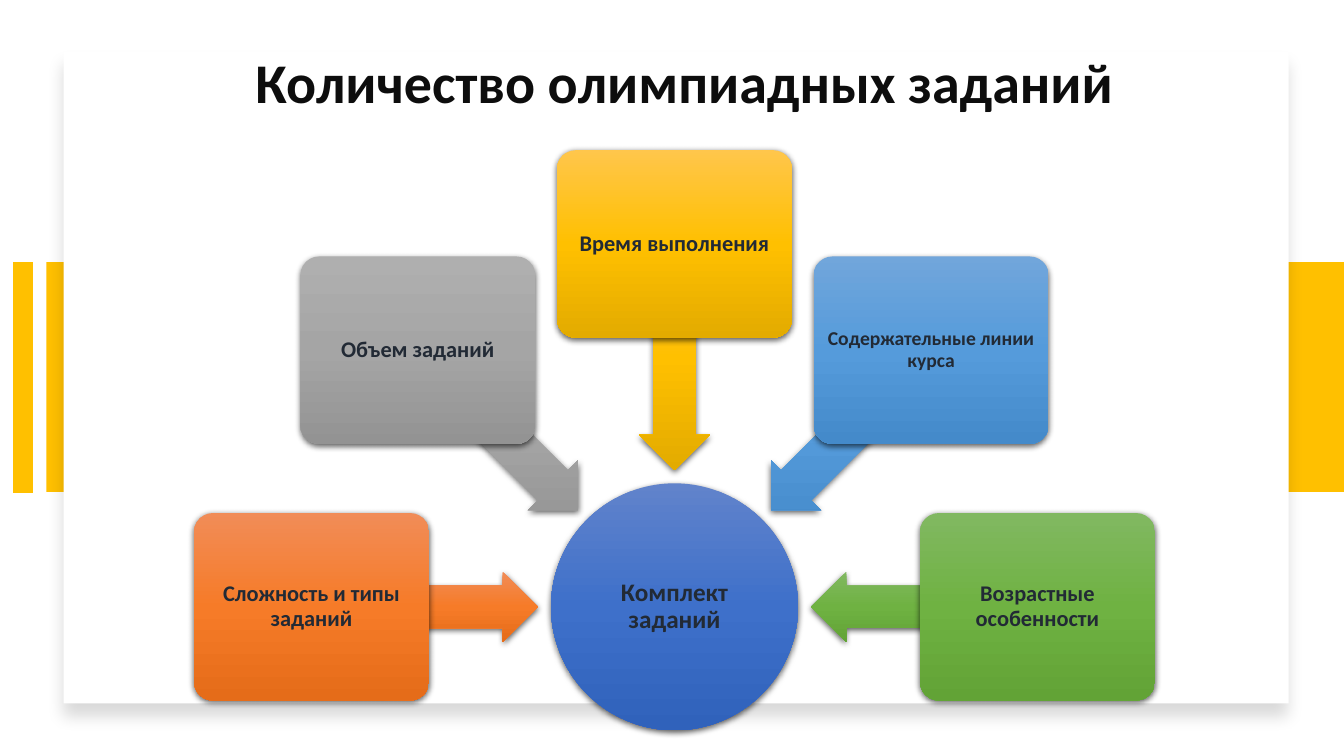
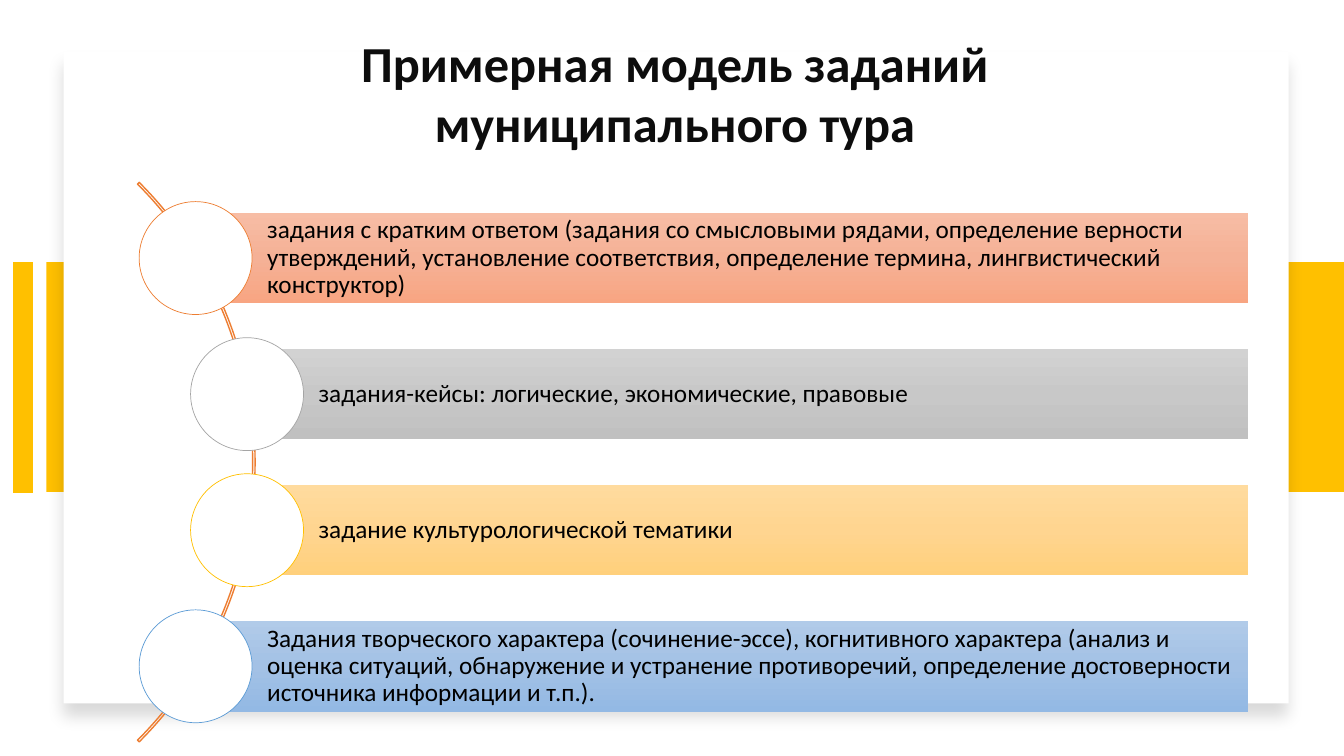
import math

import pptx
import pptx.util
from lxml import etree
from pptx.dml.color import RGBColor
from pptx.enum.shapes import MSO_CONNECTOR, MSO_SHAPE
from pptx.enum.text import MSO_ANCHOR, PP_ALIGN
from pptx.oxml.ns import qn
from copy import deepcopy

Inches, Pt = pptx.util.Inches, pptx.util.Pt

FONT = "Calibri"
WHITE = RGBColor(0xFF, 0xFF, 0xFF)
BLACK = RGBColor(0x00, 0x00, 0x00)
TITLE = RGBColor(0x0D, 0x0D, 0x0D)
LABEL = RGBColor(0x22, 0x2A, 0x35)
ORANGE = RGBColor(0xED, 0x7D, 0x31)
GREY = RGBColor(0xA5, 0xA5, 0xA5)
GOLD = RGBColor(0xFF, 0xC0, 0x00)
BLUE = RGBColor(0x5B, 0x9B, 0xD5)

# Gradients, top to bottom
HUB_GRAD = [RGBColor.from_string(c) for c in ("6183CB", "3E70CA", "3062BB")]
ORANGE_GRAD = [RGBColor.from_string(c) for c in ("F18C57", "F67B28", "E56C19")]
GREY_GRAD = [RGBColor.from_string(c) for c in ("AFAFAF", "A5A5A5", "939393")]
GOLD_GRAD = [RGBColor.from_string(c) for c in ("FFC64B", "FFC000", "E3AB00")]
BLUE_GRAD = [RGBColor.from_string(c) for c in ("71A6DB", "559BDB", "448ACA")]
GREEN_GRAD = [RGBColor.from_string(c) for c in ("81B861", "6FB242", "62A336")]
PALE_ORANGE = [RGBColor.from_string(c) for c in ("F7BDA5", "F5B196", "F8A582")]
PALE_GREY = [RGBColor.from_string(c) for c in ("D2D2D2", "C8C8C8", "C0C0C0")]
PALE_GOLD = [RGBColor.from_string(c) for c in ("FFDB9E", "FFD590", "FFD07C")]
PALE_BLUE = [RGBColor.from_string(c) for c in ("B1CBE9", "A3C1E5", "93B9E4")]

# Shadows: opacity in percent, blur and distance in points
CARD_SHADOW = (15, 11, 10)
NODE_SHADOW = (63, 4.5, 1.5)


def add_shape(s, kind, box, fill=None, line=None, shadow=None):
    """Add a preset shape; fill is a colour, a list of gradient colours or None."""
    sp = s.shapes.add_shape(kind, *[Inches(v) for v in box])
    sp.shadow.inherit = False
    if fill is None:
        sp.fill.background()
    elif isinstance(fill, list):
        sp.fill.gradient()
        sp.fill.gradient_angle = 270
        grad = sp._element.spPr.find(qn("a:gradFill"))
        grad.set("rotWithShape", "0")
        first = grad.find(qn("a:gsLst"))[0]
        first.addnext(deepcopy(first))
        for stop, color, position in zip(sp.fill.gradient_stops, fill, (0, 0.5, 1)):
            stop.color.rgb = color
            stop.position = position
    else:
        sp.fill.solid()
        sp.fill.fore_color.rgb = fill
    if line:
        sp.line.color.rgb, sp.line.width = line[0], Pt(line[1])
    else:
        sp.line.fill.background()
    if shadow:
        alpha, blur, dist = shadow
        effects = sp._element.spPr.find(qn("a:effectLst"))
        outer = etree.SubElement(effects, qn("a:outerShdw"), blurRad=str(Pt(blur)),
                                 dist=str(Pt(dist)), dir="5400000", algn="ctr", rotWithShape="0")
        color = etree.SubElement(outer, qn("a:srgbClr"), val=str(BLACK))
        etree.SubElement(color, qn("a:alpha"), val=str(alpha * 1000))
    return sp


def write(sp, text, size, color, bold=True, align=PP_ALIGN.CENTER, spacing=0.9,
          insets=(0.1, 0.05, 0.1, 0.05)):
    """Put one vertically centred paragraph into a shape."""
    tf = sp.text_frame
    tf.word_wrap = True
    tf.vertical_anchor = MSO_ANCHOR.MIDDLE
    tf.margin_left, tf.margin_top, tf.margin_right, tf.margin_bottom = [Inches(v) for v in insets]
    p = tf.paragraphs[0]
    p.text, p.alignment, p.line_spacing = text, align, spacing
    p.font.name, p.font.size, p.font.bold = FONT, Pt(size), bold
    p.font.color.rgb = color
    return p


prs = pptx.Presentation()
prs.slide_width, prs.slide_height = Inches(13.33), Inches(7.5)

# Shared frame: gold band, gold stripe, white card, title
titles = [
    ("Количество олимпиадных заданий", (2.4, 0.44, 8.77, 0.81), 40, 0.9, 0),
    ("Примерная модель заданий муниципального тура", (2.16, 0.33, 9.07, 1.17), 36, 1.0, 6),
]
for text, box, size, spacing, after in titles:
    s = prs.slides.add_slide(prs.slide_layouts[6])
    add_shape(s, MSO_SHAPE.RECTANGLE, (0.46, 2.6, 12.87, 2.28), GOLD)
    stripe = s.shapes.add_connector(MSO_CONNECTOR.STRAIGHT, Inches(0.23), Inches(2.6),
                                    Inches(0.23), Inches(4.89))
    stripe.line.color.rgb, stripe.line.width = GOLD, Pt(14)
    etree.SubElement(stripe._element.spPr, qn("a:effectLst"))
    add_shape(s, MSO_SHAPE.RECTANGLE, (0.63, 0.51, 12.15, 6.47), WHITE, shadow=CARD_SHADOW)
    tb = s.shapes.add_textbox(*[Inches(v) for v in box])
    p = write(tb, text, size, TITLE, spacing=spacing)
    p.space_after = Pt(after)

# Slide 1: hub with five factors on a half circle
s = prs.slides[0]
HUB_X, HUB_Y, HUB_D = 6.69, 6.02, 2.45
BOX_R, BOX_W, BOX_H = 3.6, 2.33, 1.86
ARROW_R, ARROW_W, ARROW_H = 2.48, 2.25, 0.7

hub = add_shape(s, MSO_SHAPE.OVAL, (HUB_X - HUB_D / 2, HUB_Y - HUB_D / 2, HUB_D, HUB_D),
                HUB_GRAD, shadow=NODE_SHADOW)
write(hub, "Комплект заданий", 18, LABEL, insets=(0.01,) * 4)

factors = [
    ("Сложность и типы заданий", 16, ORANGE_GRAD),
    ("Объем заданий", 16, GREY_GRAD),
    ("Время выполнения", 16, GOLD_GRAD),
    ("Содержательные линии курса", 14, BLUE_GRAD),
    ("Возрастные особенности", 16, GREEN_GRAD),
]
for i, (text, size, grad) in enumerate(factors):
    angle = 180 + 45 * i
    dx, dy = math.cos(math.radians(angle)), math.sin(math.radians(angle))
    arrow = add_shape(s, MSO_SHAPE.LEFT_ARROW,
                      (HUB_X + ARROW_R * dx - ARROW_W / 2, HUB_Y + ARROW_R * dy - ARROW_H / 2,
                       ARROW_W, ARROW_H), grad, shadow=NODE_SHADOW)
    arrow.adjustments[0], arrow.adjustments[1] = 0.6, 0.5
    arrow.rotation = angle % 360
    sp = add_shape(s, MSO_SHAPE.ROUNDED_RECTANGLE,
                   (HUB_X + BOX_R * dx - BOX_W / 2, HUB_Y + BOX_R * dy - BOX_H / 2,
                    BOX_W, BOX_H), grad, shadow=NODE_SHADOW)
    sp.adjustments[0] = 0.1
    write(sp, text, size, LABEL, insets=(0.03,) * 4)

# Slide 2: arc with four task types
s = prs.slides[1]
arc = add_shape(s, MSO_SHAPE.BLOCK_ARC, (-5.32, 0.66, 7.85, 7.85), line=(ORANGE, 1))
for i, value in enumerate((189, 27, 0.003)):  # from 315 to 45 degrees, thin band
    arc.adjustments[i] = value

DOT_D, BAR_H, BAR_RIGHT = 1.12, 0.9, 12.38
tasks = [
    ("задания с кратким ответом (задания со смысловыми рядами, определение верности "
     "утверждений, установление соответствия, определение термина, лингвистический "
     "конструктор)", 1.94, PALE_ORANGE, ORANGE),
    ("задания-кейсы: логические, экономические, правовые", 2.45, PALE_GREY, GREY),
    ("задание культурологической тематики", 2.45, PALE_GOLD, GOLD),
    ("Задания творческого характера (сочинение-эссе), когнитивного характера (анализ и "
     "оценка ситуаций, обнаружение и устранение противоречий, определение достоверности "
     "источника информации и т.п.).", 1.94, PALE_BLUE, BLUE),
]
for i, (text, x, grad, color) in enumerate(tasks):
    y = 2.56 + 1.35 * i
    bar = add_shape(s, MSO_SHAPE.RECTANGLE, (x, y - BAR_H / 2, BAR_RIGHT - x, BAR_H), grad)
    write(bar, text, 18, BLACK, bold=False, align=PP_ALIGN.LEFT,
          insets=(0.71, 0.05, 0.05, 0.05))
    add_shape(s, MSO_SHAPE.OVAL, (x - DOT_D / 2, y - DOT_D / 2, DOT_D, DOT_D),
              WHITE, line=(color, 0.5))

prs.save("out.pptx")
